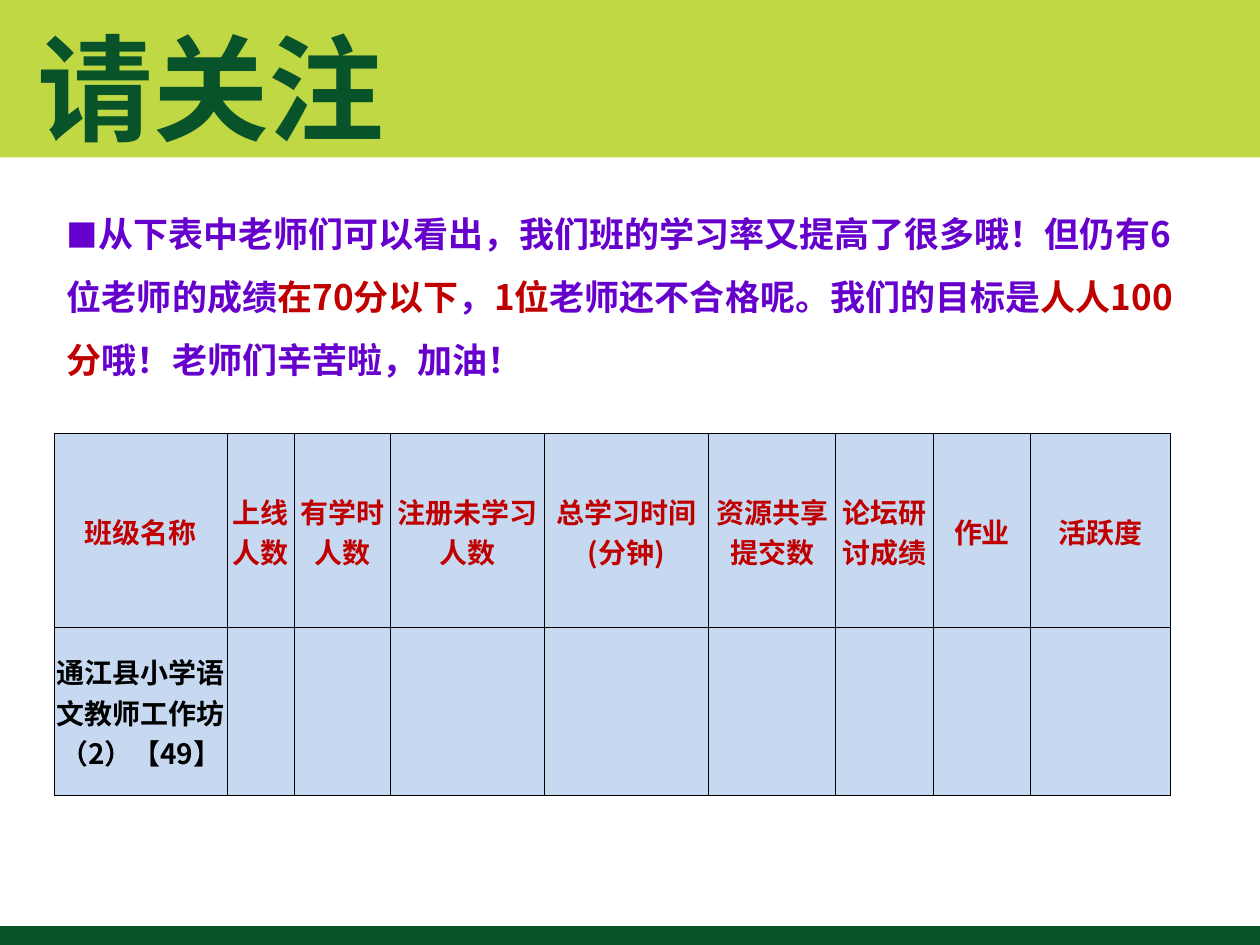
import pptx
import pptx.dml.color
import pptx.enum.shapes
import pptx.enum.text
import pptx.oxml
import pptx.oxml.ns
import pptx.util
from lxml import etree

Pt = pptx.util.Pt
FONT = "Noto Sans CJK SC"
GREEN, LIME, PURPLE, RED, BLUE = "09532A", "BFD844", "6600CC", "C00000", "C6D9F1"

MESSAGE = [
    ("■", PURPLE),
    ("从下表中老师们可以看出，我们班的学习率又提高了很多哦！但仍有6位老师的成绩", PURPLE),
    ("在70分以下", RED),
    ("，", PURPLE),
    ("1位", RED),
    ("老师还不合格呢。我们的目标是", PURPLE),
    ("人人100分", RED),
    ("哦！老师们辛苦啦，加油！", PURPLE),
]
HEADINGS = ["班级名称", "上线人数", "有学时人数", "注册未学习人数", "总学习时间(分钟)",
            "资源共享提交数", "论坛研讨成绩", "作业", "活跃度"]
CLASS_NAME = "通江县小学语文教师工作坊（2）【49】"
COLUMN_WIDTHS = [98.9, 38.2, 55.2, 87.6, 94.2, 72.6, 55.8, 55.4, 80]
ROW_HEIGHTS = [111, 96]


def color(value):
    """Turn a hex string into a colour."""
    return pptx.dml.color.RGBColor.from_string(value)


def style_run(run, size, ink, bold=True):
    """Set font, size, colour and weight of a run."""
    run.font.name = FONT
    run.font.size = Pt(size)
    run.font.bold = bold
    run.font.color.rgb = color(ink)
    east_asian = etree.Element(pptx.oxml.ns.qn("a:ea"), typeface=FONT)
    run.font._element.find(pptx.oxml.ns.qn("a:latin")).addnext(east_asian)


def place(shape, left, top, width, height):
    """Move and size a shape, in points."""
    shape.left, shape.top = Pt(left), Pt(top)
    shape.width, shape.height = Pt(width), Pt(height)


def add_band(slide, top, height, fill):
    """Add a full-width colour band behind everything else."""
    band = slide.shapes.add_shape(pptx.enum.shapes.MSO_SHAPE.RECTANGLE,
                                  0, Pt(top), Pt(720), Pt(height))
    band.shadow.inherit = False
    band.fill.solid()
    band.fill.fore_color.rgb = color(fill)
    band.line.fill.background()
    slide.shapes.element.insert(2, band.element)


def fill_title(title):
    """Write the heading."""
    place(title, 14.4, 15.1, 489.6, 68.4)
    frame = title.text_frame
    frame.text = "请关注"
    frame.auto_size = pptx.enum.text.MSO_AUTO_SIZE.NONE
    frame.vertical_anchor = pptx.enum.text.MSO_ANCHOR.MIDDLE
    frame.paragraphs[0].alignment = pptx.enum.text.PP_ALIGN.LEFT
    style_run(frame.paragraphs[0].runs[0], 66, GREEN)


def fill_message(body):
    """Write the message to the teachers."""
    place(body, 31, 105.8, 648, 364.3)
    body.text_frame.auto_size = pptx.enum.text.MSO_AUTO_SIZE.NONE
    paragraph = body.text_frame.paragraphs[0]
    paragraph.line_spacing = 1.5
    paragraph.space_before = Pt(0)
    properties = paragraph._p.get_or_add_pPr()
    properties.set("marL", "0")
    properties.set("indent", "0")
    etree.SubElement(properties, pptx.oxml.ns.qn("a:buNone"))
    for words, ink in MESSAGE:
        run = paragraph.add_run()
        run.text = words
        marker = words == "■"
        style_run(run, 18 if marker else 20, ink, not marker)


def add_borders(cell):
    """Draw thin black lines round a cell."""
    properties = cell._tc.get_or_add_tcPr()
    for index, side in enumerate(("lnL", "lnR", "lnT", "lnB")):
        properties.insert(index, pptx.oxml.parse_xml(
            f'<a:{side} {pptx.oxml.ns.nsdecls("a")} w="{Pt(0.5)}"><a:solidFill>'
            f'<a:srgbClr val="000000"/></a:solidFill></a:{side}>'))


def fill_cell(cell, words, ink):
    """Format a cell and write its words."""
    cell.fill.solid()
    cell.fill.fore_color.rgb = color(BLUE)
    add_borders(cell)
    cell.vertical_anchor = pptx.enum.text.MSO_ANCHOR.MIDDLE
    cell.margin_left = cell.margin_right = cell.margin_top = Pt(0.72)
    cell.margin_bottom = Pt(0)
    if words:
        cell.text_frame.text = words
        paragraph = cell.text_frame.paragraphs[0]
        paragraph.alignment = pptx.enum.text.PP_ALIGN.CENTER
        style_run(paragraph.runs[0], 16, ink)


def add_results(slide):
    """Add the table of class results."""
    results = slide.shapes.add_table(
        len(ROW_HEIGHTS), len(COLUMN_WIDTHS), Pt(31), Pt(247.6),
        Pt(sum(COLUMN_WIDTHS)), Pt(sum(ROW_HEIGHTS))).table
    for column, width in zip(results.columns, COLUMN_WIDTHS):
        column.width = Pt(width)
    for row, height in zip(results.rows, ROW_HEIGHTS):
        row.height = Pt(height)
    for index, heading in enumerate(HEADINGS):
        fill_cell(results.cell(0, index), heading, RED)
        fill_cell(results.cell(1, index), "" if index else CLASS_NAME, "000000")


def main():
    """Build the slide and save it."""
    deck = pptx.Presentation()
    deck.slide_width, deck.slide_height = Pt(720), Pt(540)
    slide = deck.slides.add_slide(deck.slide_layouts[1])
    add_band(slide, 0, 90, LIME)
    add_band(slide, 529.2, 10.8, GREEN)
    fill_title(slide.shapes.title)
    fill_message(slide.placeholders[1])
    add_results(slide)
    deck.save("out.pptx")


if __name__ == "__main__":
    main()
